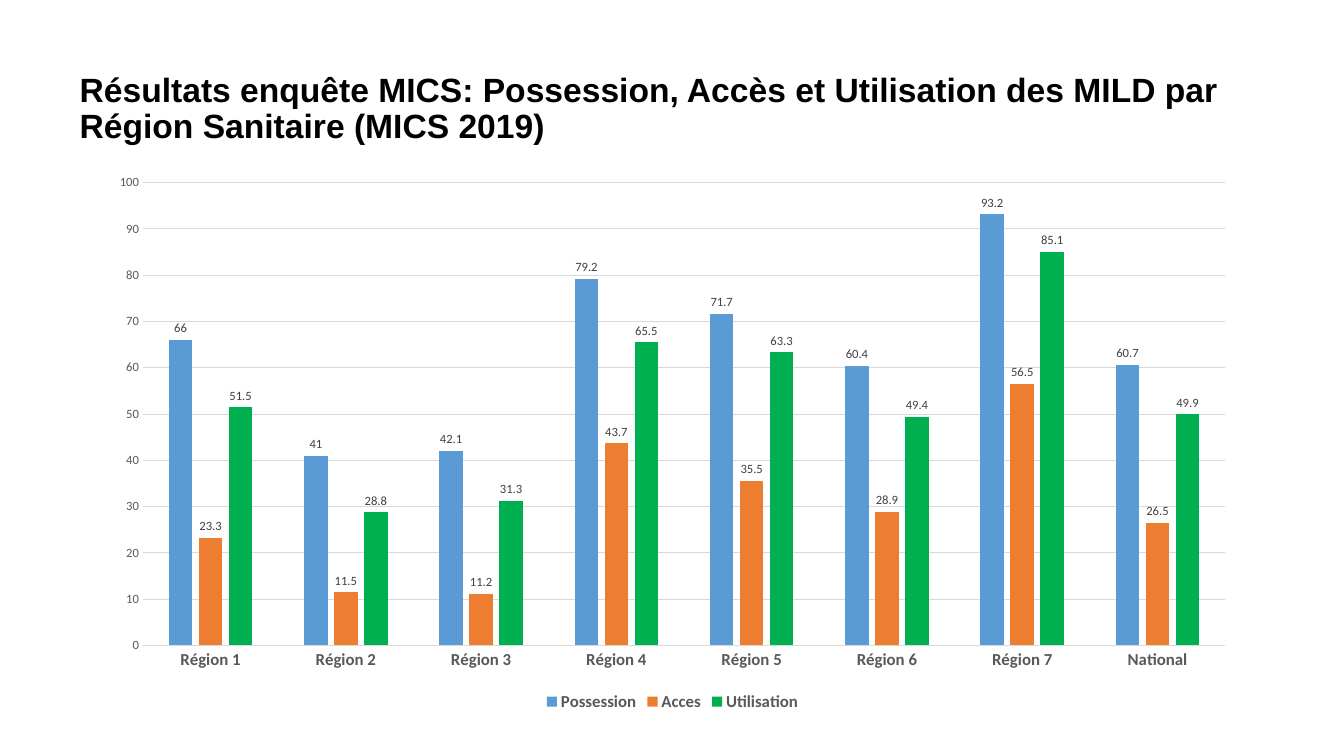
from pptx import Presentation
from pptx import util as u
from pptx.chart.data import CategoryChartData
from pptx.dml.color import RGBColor
from pptx.enum import chart as c, text

BLACK = RGBColor(0x00, 0x00, 0x00)
DARK = RGBColor(0x40, 0x40, 0x40)
GREY = RGBColor(0x59, 0x59, 0x59)
PALE = RGBColor(0xD9, 0xD9, 0xD9)
BLUE = RGBColor(0x5B, 0x9B, 0xD5)
ORANGE = RGBColor(0xED, 0x7D, 0x31)
GREEN = RGBColor(0x00, 0xB0, 0x50)

TITLE = ("Résultats enquête MICS: Possession, Accès et Utilisation "
         "des MILD par Région Sanitaire (MICS 2019)")
REGIONS = [f"Région {number}" for number in range(1, 8)] + ["National"]
SERIES = [
    ("Possession", BLUE, (66, 41, 42.1, 79.2, 71.7, 60.4, 93.2, 60.7)),
    ("Acces", ORANGE, (23.3, 11.5, 11.2, 43.7, 35.5, 28.9, 56.5, 26.5)),
    ("Utilisation", GREEN, (51.5, 28.8, 31.3, 65.5, 63.3, 49.4, 85.1, 49.9)),
]
TITLE_AREA = (0.69, 0.43, 11.96, 1.2)
CHART_AREA = (0.96, 1.63, 11.42, 5.47)


def style(font, color, **values):
    font.color.rgb = color
    for name, value in values.items():
        setattr(font, name, value)


def rule(line, color):
    line.color.rgb = color
    line.width = u.Pt(0.75)


def add_title(page):
    title = page.shapes.title
    title.left, title.top, title.width, title.height = map(u.Inches, TITLE_AREA)
    frame = title.text_frame
    frame.text = TITLE
    for name, value in {"word_wrap": True, "auto_size": text.MSO_AUTO_SIZE.NONE,
                        "vertical_anchor": text.MSO_ANCHOR.MIDDLE,
                        "margin_top": u.Inches(0.17)}.items():
        setattr(frame, name, value)
    para = frame.paragraphs[0]
    para.alignment = text.PP_ALIGN.LEFT
    para.line_spacing = 0.9
    style(para.runs[0].font, BLACK, name="Arial", size=u.Pt(24), bold=True)


def add_columns(page):
    data = CategoryChartData()
    data.categories = REGIONS
    for name, _, values in SERIES:
        data.add_series(name, values)
    chart = page.shapes.add_chart(c.XL_CHART_TYPE.COLUMN_CLUSTERED,
                                  *map(u.Inches, CHART_AREA), data).chart
    chart.has_title = False
    style(chart.font, BLACK, name="Calibri", size=u.Pt(10))

    plot = chart.plots[0]
    plot.gap_width, plot.overlap, plot.vary_by_categories = 219, -27, False
    for series, (_, color, _) in zip(plot.series, SERIES):
        series.format.fill.solid()
        series.format.fill.fore_color.rgb = color
        labels = series.data_labels
        labels.show_value = True
        labels.position = c.XL_LABEL_POSITION.OUTSIDE_END
        style(labels.font, DARK, name="Calibri", size=u.Pt(9))

    regions, percent = chart.category_axis, chart.value_axis
    for axis, size, bold in ((regions, 12, True), (percent, 9, False)):
        axis.major_tick_mark = axis.minor_tick_mark = c.XL_TICK_MARK.NONE
        style(axis.tick_labels.font, GREY, name="Calibri", size=u.Pt(size), bold=bold)
    rule(regions.format.line, PALE)
    percent.format.line.fill.background()
    percent.has_major_gridlines = True
    rule(percent.major_gridlines.format.line, PALE)
    percent.minimum_scale, percent.maximum_scale, percent.major_unit = 0, 100, 10

    chart.has_legend = True
    chart.legend.position = c.XL_LEGEND_POSITION.BOTTOM
    chart.legend.include_in_layout = False
    style(chart.legend.font, GREY, name="Calibri", size=u.Pt(12), bold=True)


def main():
    deck = Presentation()
    deck.slide_width, deck.slide_height = u.Inches(13.33), u.Inches(7.5)
    page = deck.slides.add_slide(deck.slide_layouts.get_by_name("Title Only"))
    add_title(page)
    add_columns(page)
    deck.save("out.pptx")


if __name__ == "__main__":
    main()
